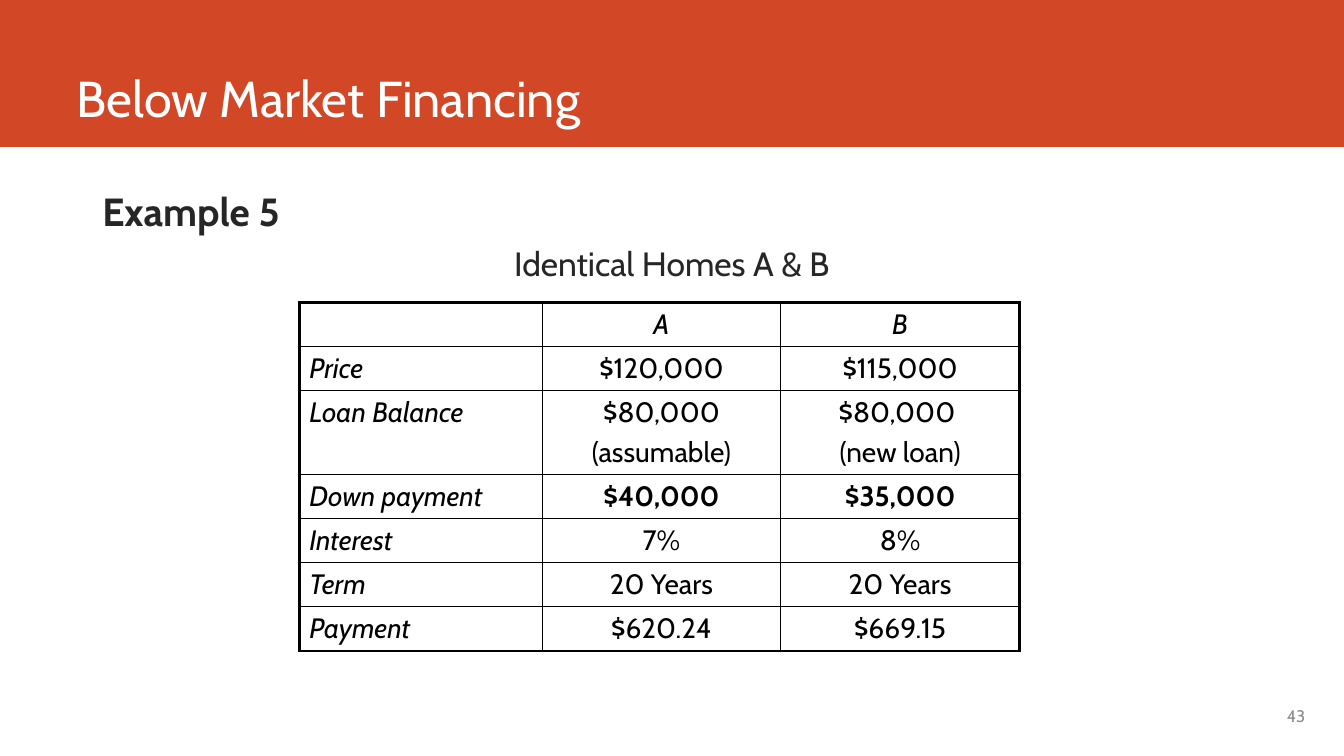
"""Build the slide comparing the financing of two identical homes."""
from dataclasses import dataclass

from lxml import etree
from pptx import Presentation
from pptx import util as u
from pptx.dml.color import RGBColor
from pptx.enum import shapes, text
from pptx.oxml import ns

Pt = u.Pt
ALIGN = text.PP_ALIGN
ANCHOR = text.MSO_ANCHOR


@dataclass(frozen=True)
class Theme:
    font: str = "Cabin"
    band: str = "D24726"
    white: str = "FFFFFF"
    body: str = "262626"
    black: str = "000000"
    muted: str = "8C8C8C"
    title_size: int = 36
    heading_size: int = 28
    caption_size: int = 24
    cell_size: int = 20
    number_size: int = 12
    outer_line: float = 2.25
    inner_line: float = 1


THEME = Theme()
WIDTH, HEIGHT = 960, 540
COLUMNS = (173.5, 170.5, 170.5)
ROW_HEIGHT, TALL_ROW_HEIGHT = 31.5, 60
HOMES = (
    ("", "A", "B"),
    ("Price", "$120,000", "$115,000"),
    ("Loan Balance", "$80,000\n(assumable)", "$80,000 \n(new loan)"),
    ("Down payment", "$40,000", "$35,000"),
    ("Interest", "7%", "8%"),
    ("Term", "20 Years", "20 Years"),
    ("Payment", "$620.24", "$669.15"),
)


def style(p, size, color, align=ALIGN.LEFT, bold=False, italic=False):
    p.alignment = align
    for r in p.runs:
        f = r.font
        f.name, f.size, f.bold, f.italic = THEME.font, Pt(size), bold, italic
        f.color.rgb = RGBColor.from_string(color)


def add_band(s):
    sp = s.shapes.add_shape(shapes.MSO_SHAPE.RECTANGLE, 0, 0, Pt(WIDTH), Pt(105))
    sp.shadow.inherit = False
    sp.fill.solid()
    sp.fill.fore_color.rgb = RGBColor.from_string(THEME.band)
    sp.line.fill.background()
    s.shapes.title._element.addprevious(sp._element)


def set_title(s, words):
    sp = s.shapes.title
    sp.left, sp.top, sp.width, sp.height = Pt(47.5), Pt(0), Pt(847), Pt(95)
    tf = sp.text_frame
    tf.text = words
    tf.vertical_anchor = ANCHOR.BOTTOM
    style(tf.paragraphs[0], THEME.title_size, THEME.white)


def add_text(s, words, left, top, width, height, anchor=ANCHOR.TOP):
    tf = s.shapes.add_textbox(Pt(left), Pt(top), Pt(width), Pt(height)).text_frame
    tf.word_wrap = True
    tf.vertical_anchor = anchor
    tf.text = words
    return tf.paragraphs


def add_body(s):
    heading, caption = add_text(s, "Example 5\nIdentical Homes A & B", 66, 130.5, 828, 360)
    style(heading, THEME.heading_size, THEME.body, bold=True)
    style(caption, THEME.caption_size, THEME.body, ALIGN.CENTER)
    heading.space_before = Pt(6)
    for p in (heading, caption):
        p.space_after = Pt(6)


def set_borders(cell, outer_sides):
    tc_pr = cell._tc.get_or_add_tcPr()
    for i, side in enumerate("LRTB"):
        width = THEME.outer_line if side in outer_sides else THEME.inner_line
        ln = etree.Element(ns.qn(f"a:ln{side}"), w=str(Pt(width)))
        fill = etree.SubElement(ln, ns.qn("a:solidFill"))
        etree.SubElement(fill, ns.qn("a:srgbClr"), val=THEME.black)
        tc_pr.insert(i, ln)


def fill_cell(cell, words, row, col):
    cell.fill.background()
    cell.text_frame.text = words
    for p in cell.text_frame.paragraphs:
        p.space_before = Pt(THEME.cell_size * 0.2)
        style(p, THEME.cell_size, THEME.black,
              ALIGN.CENTER if col else ALIGN.LEFT,
              bold=col > 0 and HOMES[row][0] == "Down payment",
              italic=row == 0 or col == 0)
    edges = {"L": col == 0, "R": col == len(COLUMNS) - 1,
             "T": row == 0, "B": row == len(HOMES) - 1}
    set_borders(cell, [side for side, outer in edges.items() if outer])


def add_homes_table(s):
    heights = [TALL_ROW_HEIGHT if "\n" in row[1] else ROW_HEIGHT for row in HOMES]
    table = s.shapes.add_table(len(HOMES), len(COLUMNS), Pt(213.75), Pt(216),
                               Pt(sum(COLUMNS)), Pt(sum(heights))).table
    table.first_row = table.horz_banding = False
    for column, width in zip(table.columns, COLUMNS):
        column.width = Pt(width)
    for i, height in enumerate(heights):
        table.rows[i].height = Pt(height)
        for j, words in enumerate(HOMES[i]):
            fill_cell(table.cell(i, j), words, i, j)


def add_page_number(s, number):
    p, = add_text(s, number, 682, 497, 257.5, 29, ANCHOR.MIDDLE)
    style(p, THEME.number_size, THEME.muted, ALIGN.RIGHT)


def main():
    prs = Presentation()
    prs.slide_width, prs.slide_height = Pt(WIDTH), Pt(HEIGHT)
    s = prs.slides.add_slide(prs.slide_layouts.get_by_name("Title Only"))
    add_band(s)
    set_title(s, "Below Market Financing")
    add_body(s)
    add_page_number(s, "43")
    add_homes_table(s)
    prs.save("out.pptx")


if __name__ == "__main__":
    main()
